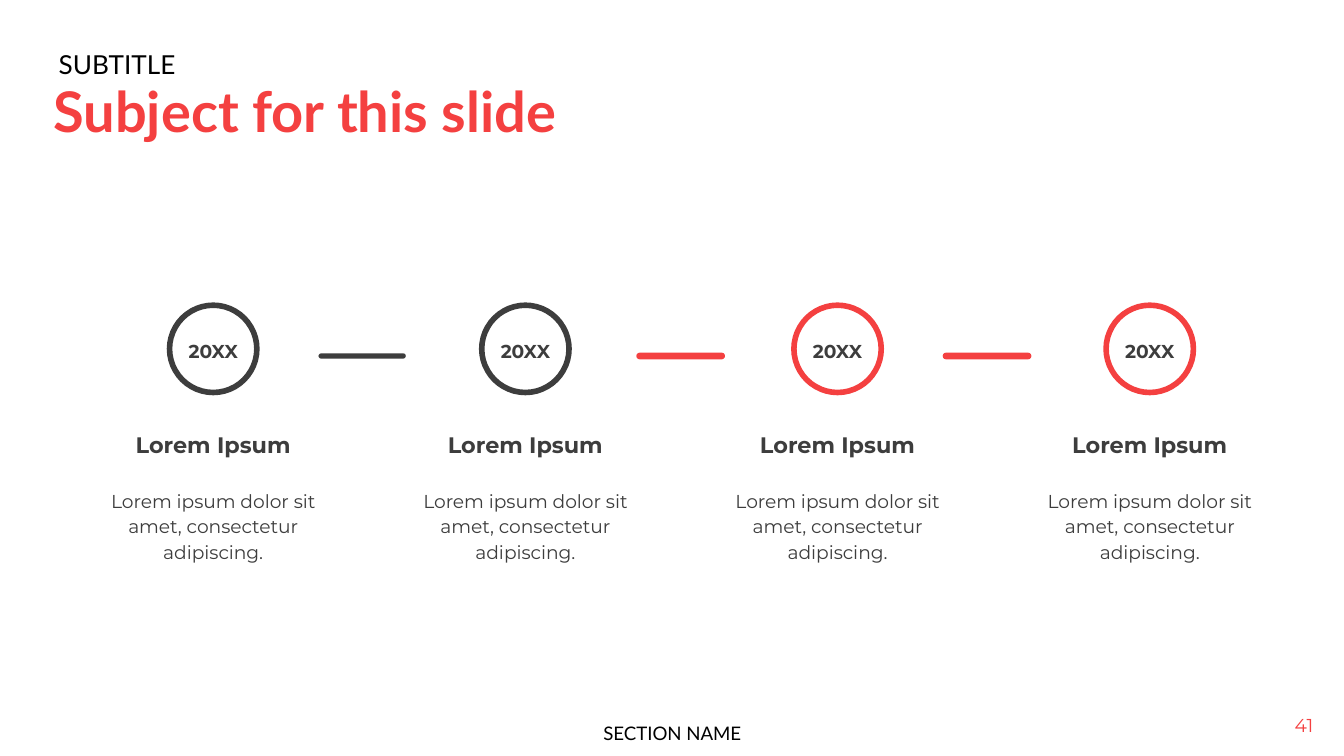
from pptx import Presentation
from pptx.dml.color import RGBColor
from pptx.enum.shapes import MSO_SHAPE
from pptx.enum.text import MSO_ANCHOR, MSO_AUTO_SIZE, PP_ALIGN
from pptx.util import Cm, Pt

LEFT, CENTER, RIGHT = PP_ALIGN.LEFT, PP_ALIGN.CENTER, PP_ALIGN.RIGHT
TOP, MIDDLE, BOTTOM = MSO_ANCHOR.TOP, MSO_ANCHOR.MIDDLE, MSO_ANCHOR.BOTTOM
DARK, RED, BLACK = "3D3D3D", "F44040", "000000"
HEAD_FONT, BODY_FONT = "Lato", "Montserrat"

SUBTITLE = "SUBTITLE"
TITLE = "Subject for this slide"
SECTION = "SECTION NAME"
PAGE = "41"
BODY = "Lorem ipsum dolor sit amet, consectetur adipiscing."
MILESTONES = [  # year, heading, body, ring colour
    ("20XX", "Lorem Ipsum", BODY, DARK),
    ("20XX", "Lorem Ipsum", BODY, DARK),
    ("20XX", "Lorem Ipsum", BODY, RED),
    ("20XX", "Lorem Ipsum", BODY, RED),
]
BARS = [(6.02, DARK, 0), (12.04, RED, 0.75), (17.83, RED, 0.75)]  # left, colour, outline

FIRST_CENTER, PITCH = 4.03, 5.9
RING, RING_TOP = 1.65, 5.77
BAR_TOP, BAR_HEIGHT = 6.68, 0.1


def rgb(color):
    return RGBColor.from_string(color)


def write(sp, text, size, color, font=BODY_FONT, bold=False, align=CENTER,
          anchor=TOP, spacing=1.0, after=0):
    tf = sp.text_frame
    tf.word_wrap = True
    tf.auto_size = MSO_AUTO_SIZE.NONE
    tf.vertical_anchor = anchor
    tf.margin_left = tf.margin_right = tf.margin_top = tf.margin_bottom = Cm(0.25)
    p = tf.paragraphs[0]
    p.text = text
    p.alignment = align
    p.line_spacing = spacing
    p.space_after = Pt(after)
    p.font.name = font
    p.font.size = Pt(size)
    p.font.bold = bold
    p.font.color.rgb = rgb(color)


def add_text(shapes, box, text, size, color, **style):
    sp = shapes.add_textbox(*map(Cm, box))
    write(sp, text, size, color, **style)


def add_milestone(shapes, center, year, heading, body, color):
    group = shapes.add_group_shape().shapes
    left = center - RING / 2
    ring = group.add_shape(MSO_SHAPE.OVAL, Cm(left), Cm(RING_TOP), Cm(RING), Cm(RING))
    ring.shadow.inherit = False
    ring.fill.background()
    ring.line.color.rgb = rgb(color)
    ring.line.width = Pt(3)
    add_text(group, (left, 6.12, RING, 0.89), year, 10, DARK,
             bold=True, spacing=1.15, after=16)
    add_text(group, (center - 2.38, 7.67, 4.76, 1.24), heading, 12, DARK,
             bold=True, anchor=BOTTOM, spacing=1.15)
    add_text(group, (center - 2.44, 8.94, 4.88, 2.06), body, 10, DARK,
             spacing=1.15, after=16)


def add_bar(shapes, left, color, outline):
    bar = shapes.add_shape(MSO_SHAPE.ROUNDED_RECTANGLE, Cm(left), Cm(BAR_TOP),
                           Cm(RING), Cm(BAR_HEIGHT))
    bar.adjustments[0] = 0.5
    bar.shadow.inherit = False
    bar.fill.solid()
    bar.fill.fore_color.rgb = rgb(color)
    if outline:
        bar.line.color.rgb = rgb(color)
        bar.line.width = Pt(outline)
    else:
        bar.line.fill.background()


prs = Presentation()
prs.slide_width, prs.slide_height = Cm(25.4), Cm(14.29)
s = prs.slides.add_slide(prs.slide_layouts[5])

add_text(s.shapes, (0.86, 0.66, 9.02, 1.09), SUBTITLE, 14, BLACK,
         font=HEAD_FONT, align=LEFT)
title = s.shapes.title
title.left, title.top, title.width, title.height = map(Cm, (0.76, 1.19, 18.26, 1.09))
write(title, TITLE, 30, RED, font=HEAD_FONT, bold=True, align=LEFT)

for bar in BARS:
    add_bar(s.shapes, *bar)
for i, milestone in enumerate(MILESTONES):
    add_milestone(s.shapes, FIRST_CENTER + i * PITCH, *milestone)

add_text(s.shapes, (9.35, 13.18, 6.71, 1.02), SECTION, 10, BLACK,
         font=HEAD_FONT, spacing=1.5, after=12)
add_text(s.shapes, (23.55, 13.16, 1.52, 1.09), PAGE, 10, RED,
         align=RIGHT, anchor=MIDDLE)

prs.save("out.pptx")
